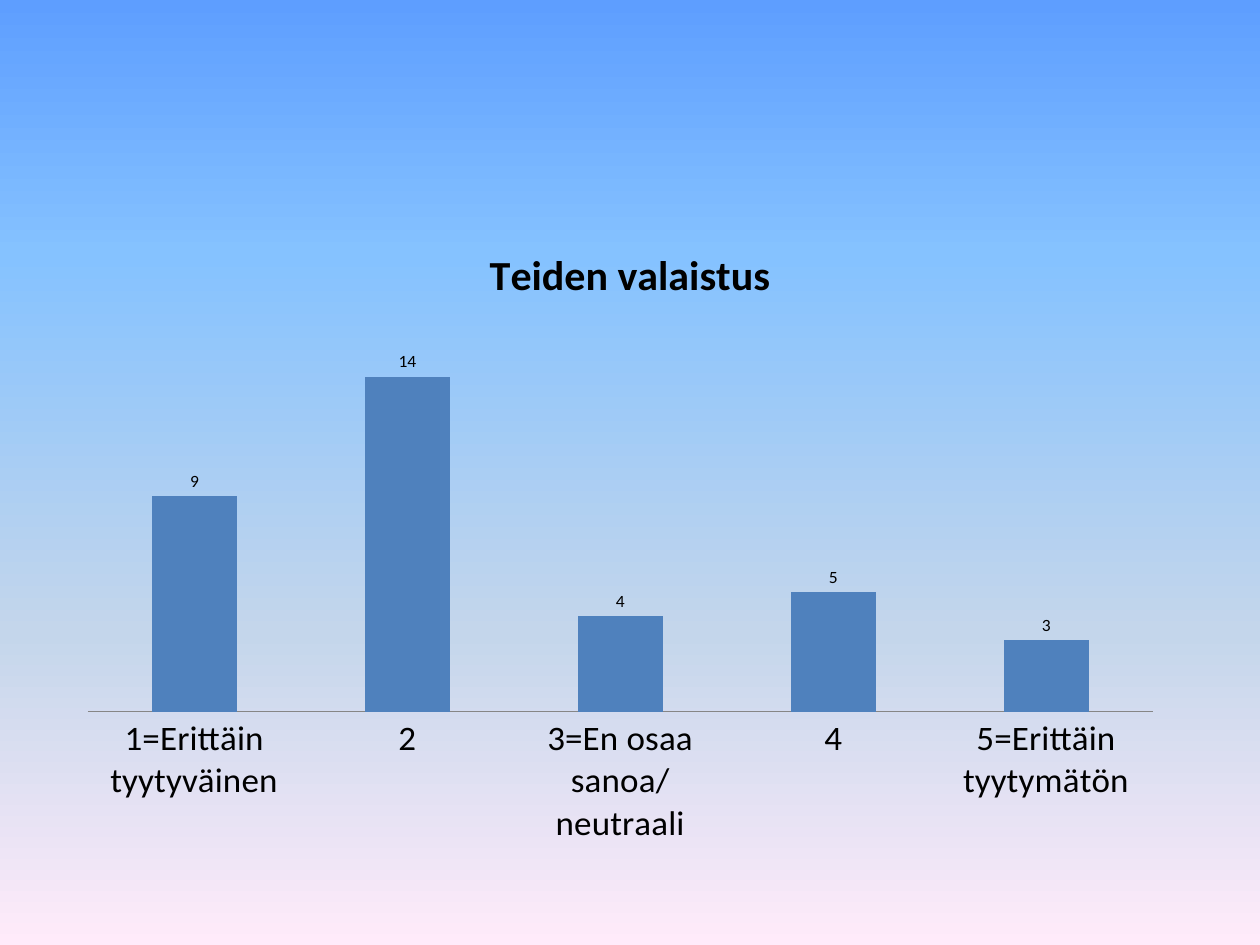
"""Build the road lighting satisfaction slide with a column chart on a gradient."""
from copy import deepcopy

from lxml.etree import SubElement
from pptx import Presentation
from pptx.chart.data import CategoryChartData
from pptx.dml.color import RGBColor
from pptx.enum.chart import XL_CHART_TYPE, XL_LABEL_POSITION, XL_TICK_MARK
from pptx.oxml.ns import qn
from pptx.util import Inches, Pt

THEME = {
    "font": "Calibri",
    "text": RGBColor.from_string("000000"),
    "bar": RGBColor.from_string("4F81BD"),
    "axis": RGBColor.from_string("868686"),
    "sky": [(0, "5E9EFF"), (0.27, "85C2FF"), (0.67, "C4D6EB"), (1, "FFEBFA")],
    "label_size": Pt(10),
    "category_size": Pt(20),
    "title_size": Pt(24),
}
RATINGS = {
    "1=Erittäin tyytyväinen": 9,
    "2": 14,
    "3=En osaa sanoa/neutraali": 4,
    "4": 5,
    "5=Erittäin tyytymätön": 3,
}
PLOT_AREA = {"x": 0.022, "y": 0.177, "w": 0.939, "h": 0.626}


def style_font(font, size, bold=False):
    for attribute, value in {"name": THEME["font"], "size": size, "bold": bold}.items():
        setattr(font, attribute, value)
    font.color.rgb = THEME["text"]


presentation = Presentation()
presentation.slide_width = Inches(10)
presentation.slide_height = Inches(7.5)
slide = presentation.slides.add_slide(presentation.slide_layouts[6])

sky = slide.background.fill
sky.gradient()
sky.gradient_angle = 270
stop_list = slide.element.find(".//" + qn("a:gsLst"))
for extra_stop in [deepcopy(stop) for stop in stop_list]:
    stop_list.append(extra_stop)
for stop, (position, color) in zip(sky.gradient_stops, THEME["sky"]):
    stop.position = position
    stop.color.rgb = RGBColor.from_string(color)

ratings = CategoryChartData()
ratings.categories = list(RATINGS)
ratings.add_series("Series 1", list(RATINGS.values()))
chart = slide.shapes.add_chart(
    XL_CHART_TYPE.COLUMN_CLUSTERED,
    Inches(0.5), Inches(1.75), Inches(9), Inches(4.95), ratings,
).chart
chart.has_legend = False
style_font(chart.font, THEME["label_size"])

heading = chart.chart_title.text_frame
heading.text = "Teiden valaistus"
style_font(heading.paragraphs[0].runs[0].font, THEME["title_size"], bold=True)

rating_axis = chart.category_axis
rating_axis.major_tick_mark = XL_TICK_MARK.NONE
rating_axis.format.line.color.rgb = THEME["axis"]
rating_axis.format.line.width = Pt(0.75)
style_font(rating_axis.tick_labels.font, THEME["category_size"])

count_axis_format = {
    "visible": False,
    "has_major_gridlines": False,
    "minimum_scale": 0,
    "maximum_scale": 16,
}
for attribute, value in count_axis_format.items():
    setattr(chart.value_axis, attribute, value)

columns = chart.plots[0]
columns.gap_width = 150
columns.overlap = -25
columns.vary_by_categories = False
columns.has_data_labels = True
columns.data_labels.show_value = True
columns.data_labels.position = XL_LABEL_POSITION.OUTSIDE_END
style_font(columns.data_labels.font, THEME["label_size"])
bars = columns.series[0].format.fill
bars.solid()
bars.fore_color.rgb = THEME["bar"]

plot_area = chart.element.find(".//" + qn("c:plotArea"))
for old_layout in plot_area.findall(qn("c:layout")):
    plot_area.remove(old_layout)
layout = SubElement(plot_area, qn("c:layout"))
plot_area.insert(0, layout)
manual = SubElement(layout, qn("c:manualLayout"))
settings = {"layoutTarget": "inner", "xMode": "edge", "yMode": "edge", **PLOT_AREA}
for tag, value in settings.items():
    SubElement(manual, qn(f"c:{tag}")).set("val", str(value))

presentation.save("out.pptx")
